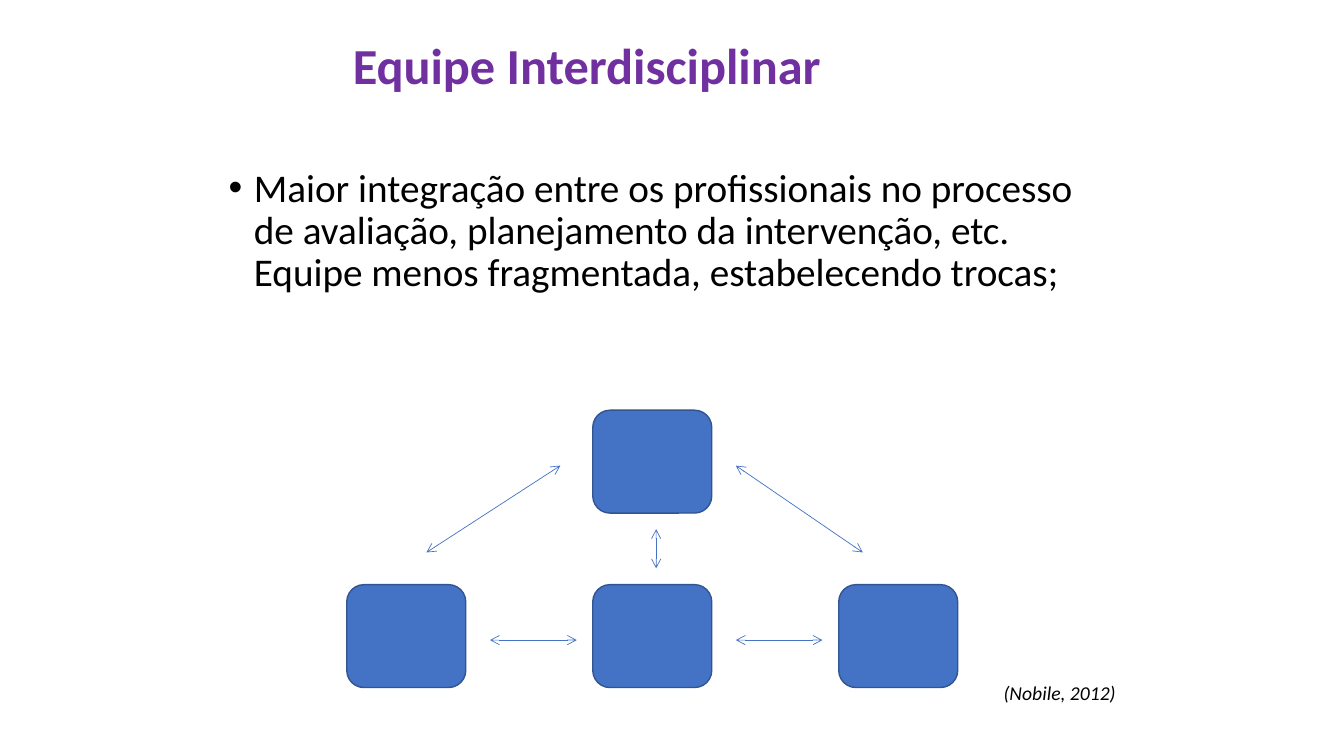
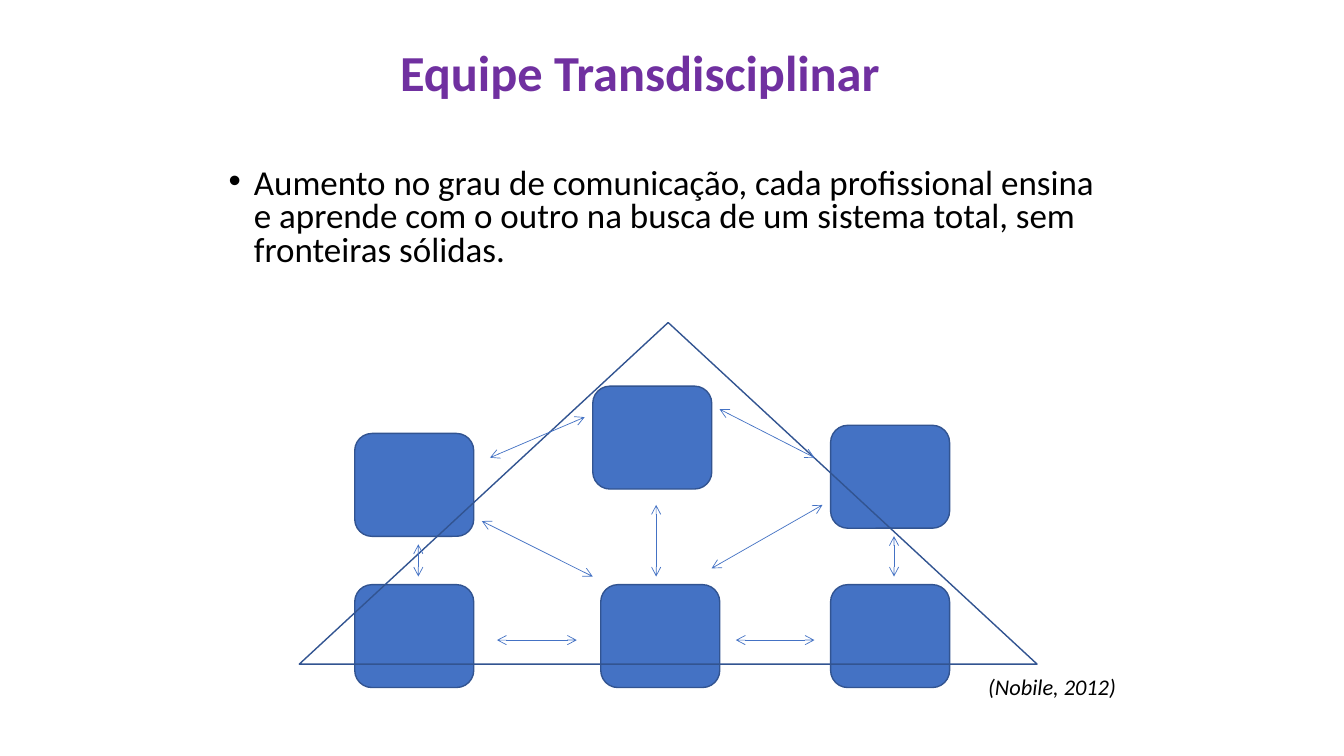
import lxml.etree
import pptx
import pptx.dml.color
import pptx.enum.shapes
import pptx.enum.text
import pptx.oxml.ns
import pptx.util

Pt = pptx.util.Pt
qn = pptx.oxml.ns.qn
SHAPES = pptx.enum.shapes.MSO_SHAPE
ALIGN = pptx.enum.text.PP_ALIGN
ANCHOR = pptx.enum.text.MSO_ANCHOR
COLORS = {
    name: pptx.dml.color.RGBColor.from_string(code)
    for name, code in {
        "title": "7030A0",
        "text": "000000",
        "box": "4472C4",
        "outline": "325491",
    }.items()
}
FONT = "Calibri"
BOX_WIDTH, BOX_HEIGHT = 85, 73.5
TEXT_LEFT, TEXT_WIDTH = 156.2, 648
BOTTOM_ROW, ARROW_ROW = 417.6, 457.2

PAGES = [
    {
        "title": "Equipe Interdisciplinar",
        "title_area": (244.8, 3.6, 648, 90),
        "body": "Maior integração entre os profissionais no processo de avaliação, "
                "planejamento da intervenção, etc. Equipe menos fragmentada, "
                "estabelecendo trocas;",
        "body_size": 28,
        "spacing": 0.9,
        "source_size": 14,
        "source_top": 484.5,
        "boxes": [(423.4, 293)] + [(247.7 + 175.7 * i, BOTTOM_ROW) for i in range(3)],
        "arrows": [
            (350, ARROW_ROW, 412, ARROW_ROW),
            (525.6, ARROW_ROW, 587.5, ARROW_ROW),
            (400.3, 332.6, 304.6, 394.6),
            (525.6, 332.6, 616.3, 394.6),
            (468.7, 378, 468.7, 406),
        ],
        "triangle": None,
    },
    {
        "title": "Equipe Transdisciplinar",
        "title_area": (278.6, 25.9, 648, 56.2),
        "body": "Aumento no grau de comunicação, cada profissional ensina e aprende "
                "com o outro na busca de um sistema total, sem fronteiras sólidas.",
        "body_size": 25,
        "spacing": 0.8,
        "source_size": 16,
        "source_top": 481,
        "boxes": [(left, BOTTOM_ROW) for left in (253.4, 429.1, 593.3)]
                 + [(253.4, 309.6), (593.3, 303.8), (423.4, 275.8)],
        "arrows": [
            (355, ARROW_ROW, 412, ARROW_ROW),
            (525.6, ARROW_ROW, 581.8, ARROW_ROW),
            (638.6, 383, 638.6, 411.8),
            (298.8, 388.8, 298.8, 411.8),
            (344.2, 372.2, 423.4, 411.8),
            (587.5, 360.7, 508.3, 406),
            (350, 326.9, 417.6, 298),
            (514, 292.3, 581.8, 326.9),
            (468.7, 360.7, 468.7, 411.8),
        ],
        "triangle": (213.8, 230.4, 527, 244),
    },
]


def write(shape, text, size, color="text", bold=False, italic=False,
          align=ALIGN.LEFT, anchor=ANCHOR.TOP, spacing=0.9, before=0):
    frame = shape.text_frame
    frame.word_wrap = True
    frame.auto_size = pptx.enum.text.MSO_AUTO_SIZE.NONE
    frame.vertical_anchor = anchor
    para = frame.paragraphs[0]
    para.alignment = align
    para.line_spacing = spacing
    para.space_before = Pt(before)
    span = para.add_run()
    span.text = text
    span.font.name = FONT
    span.font.size = Pt(size)
    span.font.bold = bold
    span.font.italic = italic
    span.font.color.rgb = COLORS[color]
    return para


def place(shape, left, top, width, height):
    shape.left, shape.top = Pt(left), Pt(top)
    shape.width, shape.height = Pt(width), Pt(height)


deck = pptx.Presentation()
deck.slide_width, deck.slide_height = Pt(960), Pt(540)

for content in PAGES:
    page = deck.slides.add_slide(deck.slide_layouts[1])
    title, body = page.placeholders

    place(body, TEXT_LEFT, 116.6, TEXT_WIDTH, 110)
    para = write(body, content["body"], content["body_size"],
                 spacing=content["spacing"], before=10)
    properties = para._p.get_or_add_pPr()
    properties.set("marL", str(Pt(18)))
    properties.set("indent", str(-Pt(18)))

    place(title, *content["title_area"])
    write(title, content["title"], 36, color="title", bold=True, anchor=ANCHOR.MIDDLE)

    source = page.shapes.add_textbox(
        Pt(TEXT_LEFT + TEXT_WIDTH - 150), Pt(content["source_top"]), Pt(150), Pt(26))
    write(source, "(Nobile, 2012)", content["source_size"], italic=True,
          align=ALIGN.RIGHT, spacing=content["spacing"])

    outlines = [(SHAPES.ROUNDED_RECTANGLE, (left, top, BOX_WIDTH, BOX_HEIGHT))
                for left, top in content["boxes"]]
    if content["triangle"]:
        outlines.append((SHAPES.ISOSCELES_TRIANGLE, content["triangle"]))
    for kind, area in outlines:
        box = page.shapes.add_shape(kind, *map(Pt, area))
        box.shadow.inherit = False
        box.line.color.rgb = COLORS["outline"]
        box.line.width = Pt(1)
        if kind == SHAPES.ISOSCELES_TRIANGLE:
            box.fill.background()
        else:
            box.fill.solid()
            box.fill.fore_color.rgb = COLORS["box"]

    for ends in content["arrows"]:
        arrow = page.shapes.add_connector(
            pptx.enum.shapes.MSO_CONNECTOR.STRAIGHT, *map(Pt, ends))
        arrow.line.color.rgb = COLORS["box"]
        arrow.line.width = Pt(0.5)
        stroke = arrow.line._get_or_add_ln()
        for tip in ("a:headEnd", "a:tailEnd"):
            lxml.etree.SubElement(stroke, qn(tip), type="arrow")
        lxml.etree.SubElement(arrow._element.spPr, qn("a:effectLst"))

deck.save("out.pptx")
